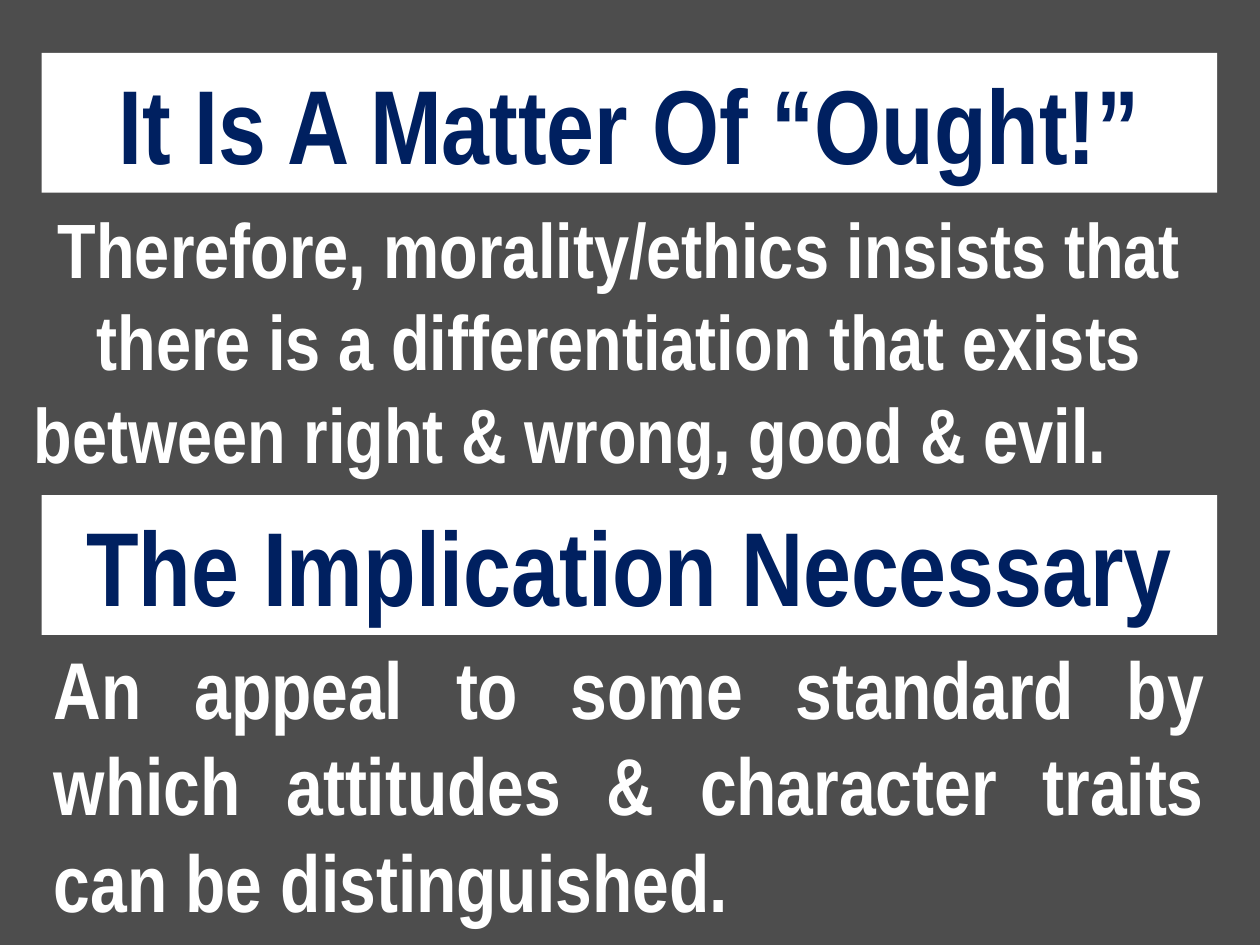
from dataclasses import dataclass

import pptx
import pptx.dml.color
import pptx.enum.shapes
import pptx.enum.text
import pptx.slide
import pptx.text.text
import pptx.util

Align = pptx.enum.text.PP_ALIGN
FONT = "Arial Narrow"
COLOURS = {"background": "4D4D4D", "white": "FFFFFF", "navy": "002060"}
BANNER_LEFT, BANNER_WIDTH, BANNER_HEIGHT = 0.33, 9.33, 1.11


@dataclass(frozen=True)
class Banner:
    top: float
    text: str


@dataclass(frozen=True)
class Statement:
    left: float
    top: float
    width: float
    height: float
    size: int
    paragraphs: tuple[tuple[str, Align], ...]


BANNERS = (
    Banner(0.42, "It Is A Matter Of “Ought!”"),
    Banner(3.93, "The Implication Necessary"),
)
STATEMENTS = (
    Statement(0.17, 1.55, 9.5, 2.32, 44, (
        ("Therefore, morality/ethics insists that there is a differentiation that exists",
         Align.CENTER),
        ("between right & wrong, good & evil.", Align.LEFT),
    )),
    Statement(BANNER_LEFT, 5.02, BANNER_WIDTH, 2.42, 46, (
        ("An appeal to some standard by which attitudes & character traits can be distinguished.",
         Align.JUSTIFY),
    )),
)


def colour(name: str) -> pptx.dml.color.RGBColor:
    return pptx.dml.color.RGBColor.from_string(COLOURS[name])


def write(frame: pptx.text.text.TextFrame, paragraphs: tuple[tuple[str, Align], ...],
          size: int, ink: str) -> None:
    frame.word_wrap = True
    frame.vertical_anchor = pptx.enum.text.MSO_ANCHOR.TOP
    for index, (text, alignment) in enumerate(paragraphs):
        para = frame.add_paragraph() if index else frame.paragraphs[0]
        para.alignment = alignment
        span = para.add_run()
        span.text = text
        span.font.name = FONT
        span.font.size = pptx.util.Pt(size)
        span.font.bold = True
        span.font.color.rgb = colour(ink)


def draw_banner(page: pptx.slide.Slide, banner: Banner) -> None:
    box = page.shapes.add_shape(
        pptx.enum.shapes.MSO_SHAPE.RECTANGLE,
        pptx.util.Inches(BANNER_LEFT), pptx.util.Inches(banner.top),
        pptx.util.Inches(BANNER_WIDTH), pptx.util.Inches(BANNER_HEIGHT))
    box.shadow.inherit = False
    box.fill.solid()
    box.fill.fore_color.rgb = colour("white")
    box.line.fill.background()
    write(box.text_frame, ((banner.text, Align.CENTER),), 60, "navy")


def draw_statement(page: pptx.slide.Slide, statement: Statement) -> None:
    box = page.shapes.add_textbox(
        pptx.util.Inches(statement.left), pptx.util.Inches(statement.top),
        pptx.util.Inches(statement.width), pptx.util.Inches(statement.height))
    write(box.text_frame, statement.paragraphs, statement.size, "white")


def main() -> None:
    deck = pptx.Presentation()
    deck.slide_width = pptx.util.Inches(10)
    deck.slide_height = pptx.util.Inches(7.5)
    page = deck.slides.add_slide(deck.slide_layouts[6])
    page.background.fill.solid()
    page.background.fill.fore_color.rgb = colour("background")
    for banner in BANNERS:
        draw_banner(page, banner)
    for statement in STATEMENTS:
        draw_statement(page, statement)
    deck.save("out.pptx")


if __name__ == "__main__":
    main()
